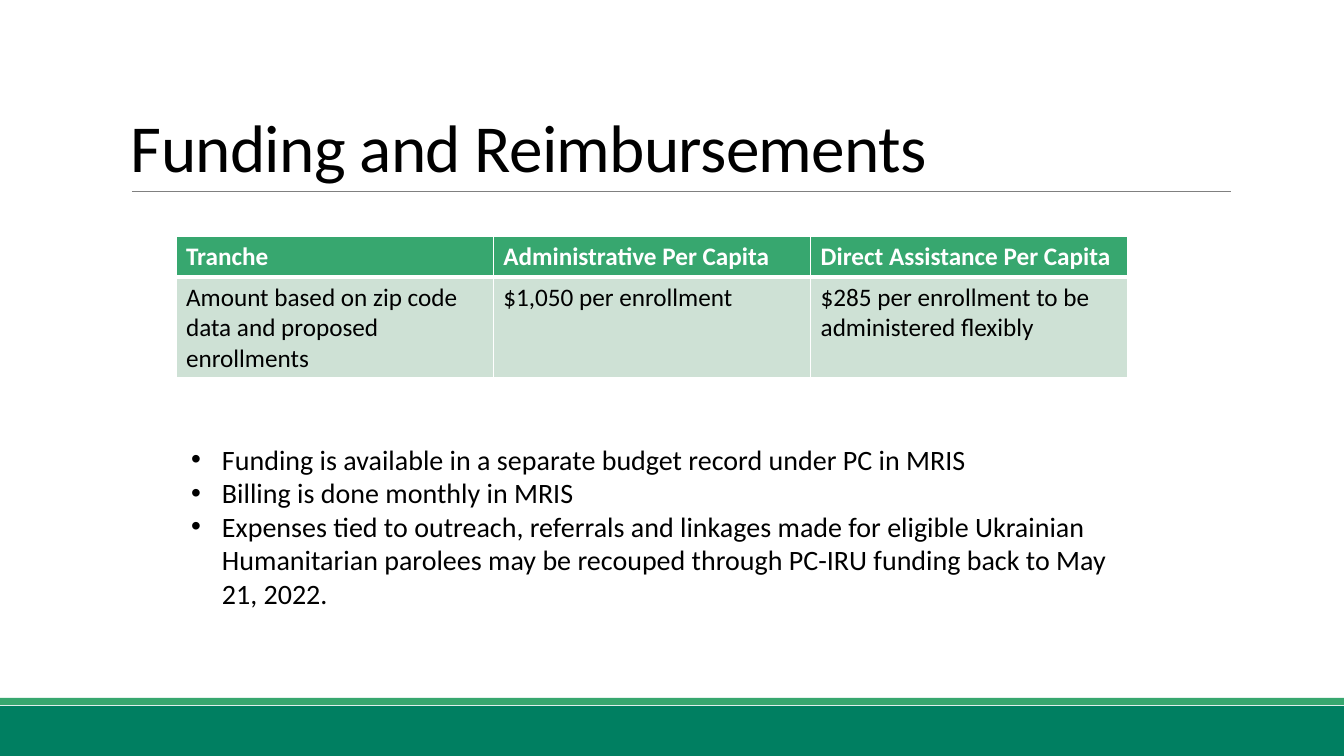
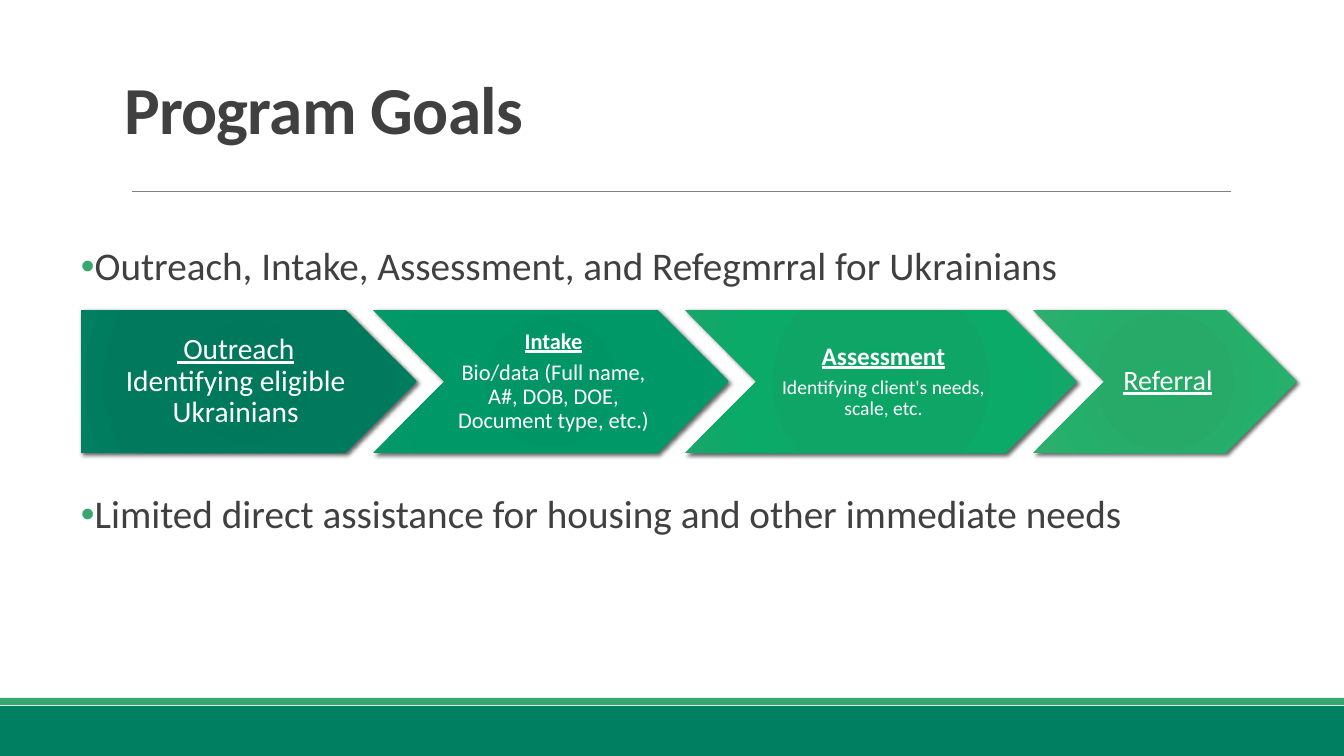
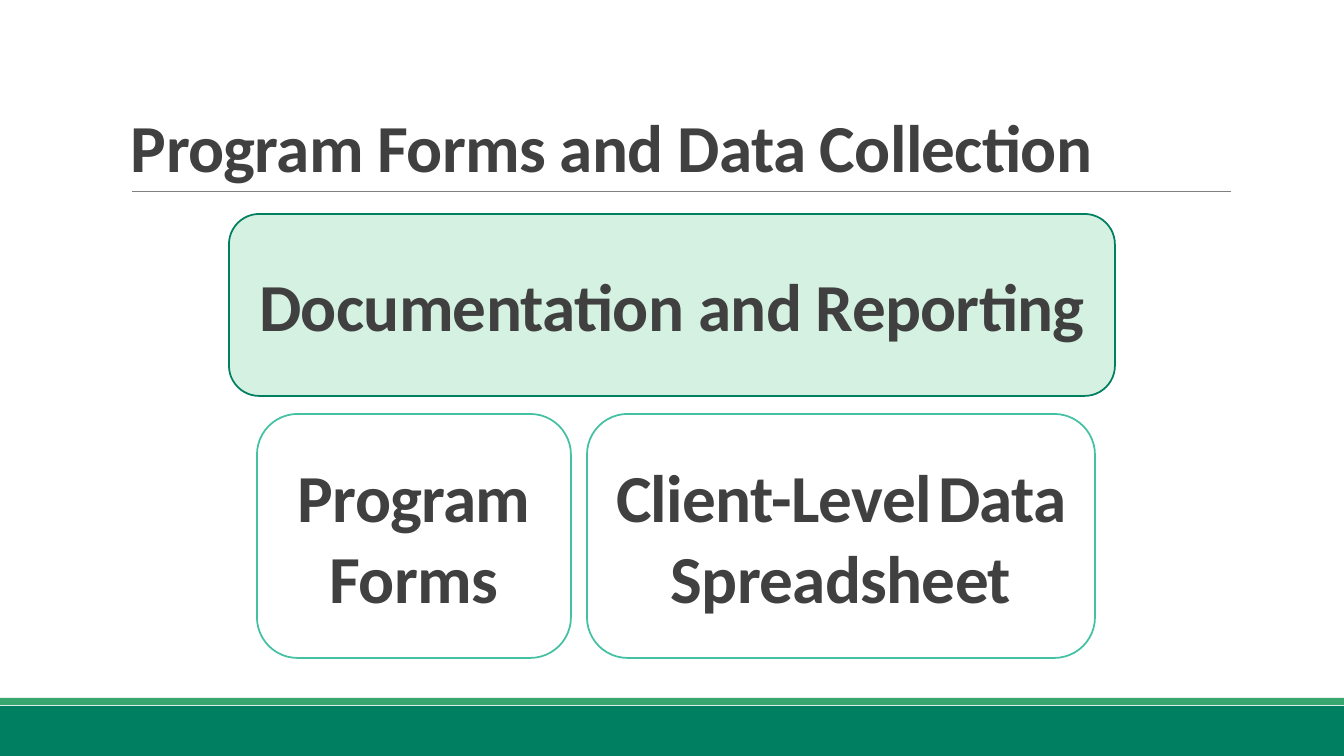
import pptx
import pptx.dml.color
import pptx.enum.shapes
import pptx.enum.text
import pptx.oxml
import pptx.oxml.ns
import pptx.util

SLIDE_W, SLIDE_H = 1344, 756
EMU_PER_PX = 12192000 / SLIDE_W
FONT = "Calibri"
COLORS = {
    "band": "007F61",
    "stripe": "37A76F",
    "rule": "808080",
    "ink": "404040",
    "black": "000000",
    "white": "FFFFFF",
    "table_body": "CEE1D5",
    "mint": "D4F1E2",
    "teal": "44C1A3",
}
HEADING = {"size": 48, "bold": True, "color": "ink", "spacing": -50}
SHAPE = pptx.enum.shapes.MSO_SHAPE
ALIGN = pptx.enum.text.PP_ALIGN
ANCHOR = pptx.enum.text.MSO_ANCHOR
A_NS = 'xmlns:a="http://schemas.openxmlformats.org/drawingml/2006/main"'

GOAL_STEPS = [
    {"outline": SHAPE.PENTAGON, "width": 336, "gap": 0, "insets": (12, 6, 3, 6),
     "shades": ("00765A", "00785B", "00795D", "007F61"),
     "lines": [(" Outreach", {"size": 21, "underline": True}),
               ("Identifying eligible Ukrainians", {"size": 21})]},
    {"outline": SHAPE.CHEVRON, "width": 356, "gap": 5, "insets": (7, 5, 2, 5),
     "shades": ("009464", "009565", "009866", "069869"),
     "lines": [("Intake", {"size": 16, "bold": True, "underline": True}),
               ("Bio/data (Full name, A#, DOB, DOE, Document type, etc.)", {"size": 16})]},
    {"outline": SHAPE.CHEVRON, "width": 392, "gap": 5, "insets": (8, 5, 3, 5),
     "shades": ("0BA666", "0FA567", "0CAA69", "19A56B"),
     "lines": [("Assessment", {"size": 18, "bold": True, "underline": True}),
               ("Identifying client's needs, scale, etc.", {"size": 14})]},
    {"outline": SHAPE.CHEVRON, "width": 264, "gap": 0, "insets": (9, 6, 3, 6),
     "shades": ("24AB67", "27AA68", "24B06A", "31AD6F"),
     "lines": [("Referral", {"size": 20, "underline": True})]},
]


def px(length):
    return pptx.util.Emu(round(length * EMU_PER_PX))


def px_box(box):
    return [px(length) for length in box]


def rgb(name):
    return pptx.dml.color.RGBColor.from_string(COLORS[name])


def set_all(target, values):
    for name, value in values.items():
        setattr(target, name, value)


def write(paragraph, text, size, color, spacing=0, **looks):
    run = paragraph.add_run()
    run.text = text
    set_all(run.font, {"name": FONT, "size": pptx.util.Pt(size), **looks})
    run.font.color.rgb = rgb(color)
    if spacing:
        run.font._element.set("spc", str(spacing))


def frame_of(shape, anchor, insets=(10, 5, 10, 5)):
    frame = shape.text_frame
    sides = ("margin_left", "margin_top", "margin_right", "margin_bottom")
    set_all(frame, {"word_wrap": True, "vertical_anchor": anchor,
                    **dict(zip(sides, px_box(insets)))})
    return frame


def paragraphs(frame, count):
    return [frame.paragraphs[0]] + [frame.add_paragraph() for _ in range(count - 1)]


def panel(slide, outline, box, fill=None, edge=None):
    shape = slide.shapes.add_shape(outline, *px_box(box))
    shape.shadow.inherit = False
    if fill:
        shape.fill.solid()
        shape.fill.fore_color.rgb = rgb(fill)
    if edge:
        shape.line.color.rgb = rgb(edge)
        shape.line.width = pptx.util.Pt(1.25)
    else:
        shape.line.fill.background()
    return shape


def start_slide(deck, title, title_box, **looks):
    slide = deck.slides.add_slide(deck.slide_layouts[6])
    panel(slide, SHAPE.RECTANGLE, (0, 706, SLIDE_W, 50), "band")
    panel(slide, SHAPE.RECTANGLE, (0, 698, SLIDE_W, 7), "stripe")
    rule = slide.shapes.add_connector(
        pptx.enum.shapes.MSO_CONNECTOR.STRAIGHT, *px_box((132, 191, 1231, 191)))
    rule.line.color.rgb = rgb("rule")
    rule.line.width = pptx.util.Pt(0.5)
    rule._element.spPr.append(pptx.oxml.parse_xml(f"<a:effectLst {A_NS}/>"))
    heading = frame_of(slide.shapes.add_textbox(*px_box(title_box)), ANCHOR.BOTTOM)
    heading.paragraphs[0].line_spacing = 0.85
    write(heading.paragraphs[0], title, **{**HEADING, **looks})
    return slide


def bullet_list(slide, box, items, indent, size, color, bullet_color, line_spacing):
    frame = frame_of(slide.shapes.add_textbox(*px_box(box)), ANCHOR.TOP)
    for paragraph, item in zip(paragraphs(frame, len(items)), items):
        paragraph.line_spacing = line_spacing
        props = paragraph._p.get_or_add_pPr()
        props.set("marL", str(px(indent)))
        props.set("indent", str(-px(indent)))
        for part in (f'<a:buClr {A_NS}><a:srgbClr val="{COLORS[bullet_color]}"/></a:buClr>',
                     f'<a:buFont {A_NS} typeface="Arial"/>',
                     f'<a:buChar {A_NS} char="•"/>'):
            props.append(pptx.oxml.parse_xml(part))
        write(paragraph, item, size, color)


def border_cell(cell, bottom):
    props = cell._tc.get_or_add_tcPr()
    widths = {"lnL": 1, "lnR": 1, "lnT": 1, "lnB": bottom}
    for position, (side, points) in enumerate(widths.items()):
        props.insert(position, pptx.oxml.parse_xml(
            f'<a:{side} {A_NS} w="{pptx.util.Pt(points)}"><a:solidFill>'
            f'<a:srgbClr val="{COLORS["white"]}"/></a:solidFill></a:{side}>'))


def funding_table(slide, box, rows, heights):
    table = slide.shapes.add_table(len(rows), len(rows[0]), *px_box(box)).table
    looks = [("stripe", "white", True, 3), ("table_body", "black", False, 1)]
    for r, (texts, (fill, ink, bold, bottom)) in enumerate(zip(rows, looks)):
        table.rows[r].height = px(heights[r])
        for c, text in enumerate(texts):
            cell = table.cell(r, c)
            cell.fill.solid()
            cell.fill.fore_color.rgb = rgb(fill)
            border_cell(cell, bottom)
            write(cell.text_frame.paragraphs[0], text, 18, ink, bold=bold)


def shade_step(shape, shades):
    stops = "".join(f'<a:gs pos="{pos}000"><a:srgbClr val="{shade}"/></a:gs>'
                    for pos, shade in zip((0, 34, 70, 100), shades))
    props = shape._element.spPr
    props.insert(2, pptx.oxml.parse_xml(
        f'<a:gradFill {A_NS} rotWithShape="1"><a:gsLst>{stops}</a:gsLst>'
        '<a:path path="circle"><a:fillToRect l="100000" t="100000" r="100000" b="100000"/>'
        '</a:path></a:gradFill>'))
    props.find(pptx.oxml.ns.qn("a:effectLst")).append(pptx.oxml.parse_xml(
        f'<a:outerShdw {A_NS} blurRad="{pptx.util.Pt(3)}" dist="{pptx.util.Pt(2)}" '
        f'dir="2700000" rotWithShape="0"><a:srgbClr val="{COLORS["black"]}">'
        '<a:alpha val="60000"/></a:srgbClr></a:outerShdw>'))


def goal_chain(slide, left, top, height, steps, overlap):
    for step in steps:
        arrow = panel(slide, step["outline"], (left, top, step["width"], height))
        shade_step(arrow, step["shades"])
        frame = frame_of(arrow, ANCHOR.MIDDLE, step["insets"])
        lines = step["lines"]
        for n, (paragraph, (text, looks)) in enumerate(zip(paragraphs(frame, len(lines)), lines)):
            set_all(paragraph, {"alignment": ALIGN.CENTER, "line_spacing": 0.9,
                                "space_before": pptx.util.Pt(step["gap"] if n else 0)})
            write(paragraph, text, color="white", **looks)
        left += step["width"] - overlap


def form_card(slide, box, fill, edge, runs):
    card = panel(slide, SHAPE.ROUNDED_RECTANGLE, box, fill, edge)
    paragraph = frame_of(card, ANCHOR.MIDDLE).paragraphs[0]
    paragraph.alignment = ALIGN.CENTER
    for text, looks in runs:
        write(paragraph, text, **{**HEADING, **looks})


def funding_slide(deck):
    slide = start_slide(deck, "Funding and Reimbursements", (121, 31, 1109, 160),
                        color="black", bold=False)
    funding_table(slide, (176, 236, 952, 142), [
        ["Tranche", "Administrative Per Capita", "Direct Assistance Per Capita"],
        ["Amount based on zip code data and proposed enrollments",
         "$1,050 per enrollment",
         "$285 per enrollment to be administered flexibly"],
    ], (41, 101))
    bullet_list(slide, (181, 437, 954, 179), [
        "Funding is available in a separate budget record under PC in MRIS",
        "Billing is done monthly in MRIS",
        "Expenses tied to outreach, referrals and linkages made for eligible Ukrainian "
        "Humanitarian parolees may be recouped through PC-IRU funding back to May 21, 2022.",
    ], 31, 20, "black", "black", 1.0)


def goals_slide(deck):
    slide = start_slide(deck, "Program Goals", (114, 0, 1109, 153))
    goal_chain(slide, 81, 310, 143, GOAL_STEPS, 44)
    for top, goal in (
            (242, "Outreach, Intake, Assessment, and Refegmrral for Ukrainians"),
            (490, "Limited direct assistance for housing and other immediate needs")):
        bullet_list(slide, (71, top, 1109, 55), [goal], 10, 28, "ink", "stripe", 0.9)


def forms_slide(deck):
    slide = start_slide(deck, "Program Forms and Data Collection", (121, 31, 1109, 160))
    form_card(slide, (229, 214, 886, 182), "mint", "band",
              [("Documentation and Reporting", {})])
    form_card(slide, (257, 414, 314, 244), "white", "teal", [("Program Forms", {})])
    form_card(slide, (587, 414, 508, 244), "white", "teal",
              [("Client-Level", {}),
               (" ", {"size": 20, "color": "black", "spacing": 0}),
               ("Data Spreadsheet", {})])


def main():
    deck = pptx.Presentation()
    set_all(deck, {"slide_width": px(SLIDE_W), "slide_height": px(SLIDE_H)})
    for build in (funding_slide, goals_slide, forms_slide):
        build(deck)
    deck.save("out.pptx")


if __name__ == "__main__":
    main()
